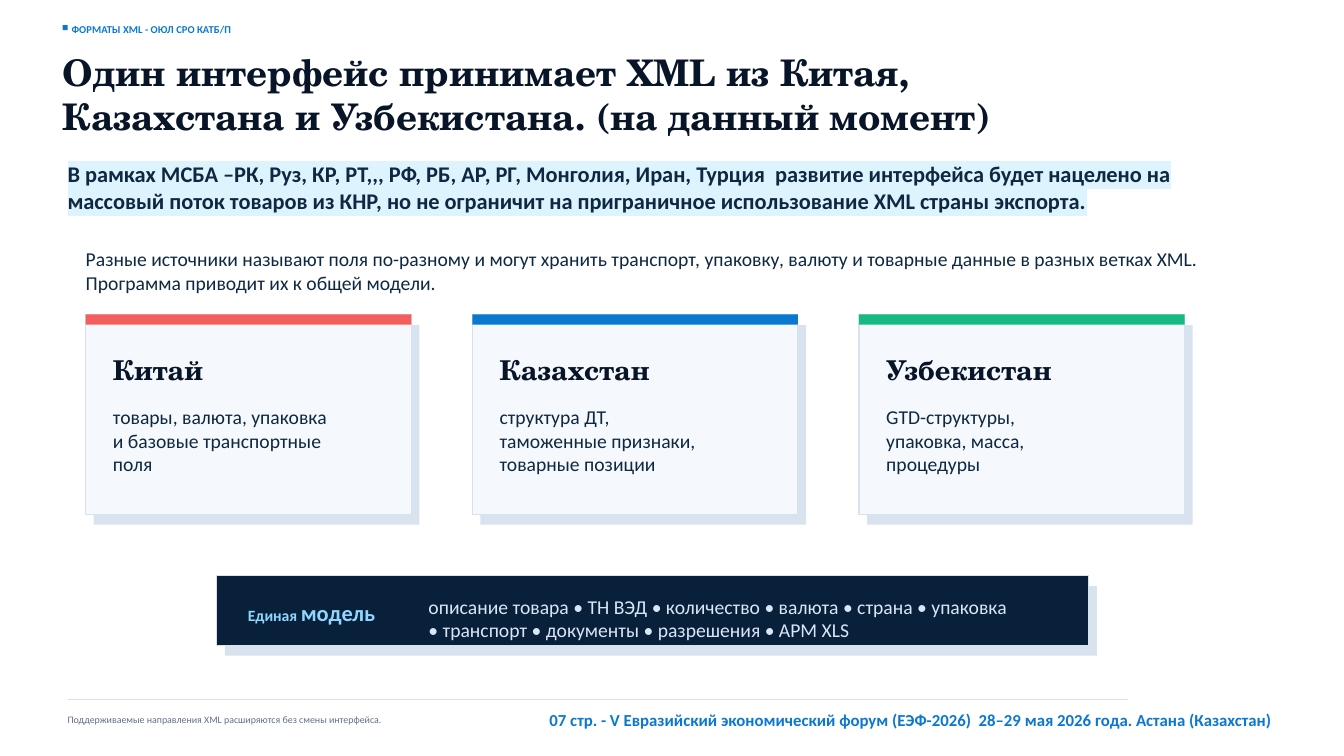
from lxml.etree import SubElement
from pptx import Presentation
from pptx.dml.color import RGBColor
from pptx.enum.shapes import MSO_CONNECTOR as Connector, MSO_SHAPE as Shape
from pptx.enum.text import MSO_ANCHOR as Anchor, MSO_AUTO_SIZE as AutoSize, PP_ALIGN as Align
from pptx.oxml import parse_xml
from pptx.oxml.ns import nsdecls, qn
from pptx.util import Inches, Pt

BLUE = RGBColor(0x0B, 0x78, 0xD0)
RED = RGBColor(0xF2, 0x5F, 0x5C)
GREEN = RGBColor(0x15, 0xB9, 0x81)
INK = RGBColor(0x08, 0x15, 0x29)
NAVY = RGBColor(0x0E, 0x28, 0x41)
PANEL = RGBColor(0x09, 0x20, 0x3B)
PAPER = RGBColor(0xF5, 0xF8, 0xFC)
SHADE = RGBColor(0xD9, 0xE2, 0xEF)
RULE = RGBColor(0xD7, 0xE2, 0xEF)
SKY = RGBColor(0x8F, 0xD6, 0xFF)
ICE = RGBColor(0xD8, 0xE7, 0xF7)
GREY = RGBColor(0x63, 0x70, 0x89)
MARKER = RGBColor(0xDD, 0xF4, 0xFF)

SANS, SERIF = "Calibri", "TeX Gyre Schola"

SECTION = "ФОРМАТЫ XML - ОЮЛ СРО КАТБ/П"
HEADLINE = "Один интерфейс принимает XML из Китая, Казахстана и Узбекистана. (на данный момент)"
LEAD = (
    "В рамках МСБА –РК, Руз, КР, РТ,,, РФ, РБ, АР, РГ, Монголия, Иран, Турция  развитие "
    "интерфейса будет нацелено на массовый поток товаров из КНР, но не ограничит на "
    "приграничное использование XML страны экспорта."
)
INTRO = (
    "Разные источники называют поля по-разному и могут хранить транспорт, упаковку, валюту "
    "и товарные данные в разных ветках XML. Программа приводит их к общей модели."
)
COUNTRIES = [
    ("Китай", RED, ["товары, валюта, упаковка", "и базовые транспортные поля"]),
    ("Казахстан", BLUE, ["структура ДТ,", "таможенные признаки,", "товарные позиции"]),
    ("Узбекистан", GREEN, ["GTD-структуры,", "упаковка, масса,", "процедуры"]),
]
MODEL_LABEL = [("Единая ", 11.2), ("модель", 16)]
MODEL_FIELDS = [
    "описание товара", "ТН ВЭД", "количество", "валюта", "страна", "упаковка",
    "транспорт", "документы", "разрешения", "АРМ XLS",
]
NOTE = "Поддерживаемые направления XML расширяются без смены интерфейса."
FOOTER = "07 стр. - V Евразийский экономический форум (ЕЭФ-2026)  28–29 мая 2026 года. Астана (Казахстан)"

CARD_LEFT, CARD_TOP, CARD_PITCH = 0.85, 3.12, 3.835
CARD_WIDTH, CARD_HEIGHT, CARD_PAD = 3.23, 1.98, 0.27
SHADE_SHIFT = (0.08, 0.105)
RULE_LEFT, RULE_TOP, RULE_WIDTH = 0.67, 6.94, 10.52

deck = Presentation()
deck.slide_width, deck.slide_height = Inches(13.33), Inches(7.5)
slide = deck.slides.add_slide(deck.slide_layouts[1])
headline, intro = slide.placeholders


def write(text, left, top, width, height, size=14, font=SANS, color=NAVY, bold=False,
          align=Align.LEFT, highlight=None, holder=None):
    box = holder or slide.shapes.add_textbox(0, 0, 0, 0)
    box.left, box.top, box.width, box.height = map(Inches, (left, top, width, height))
    frame = box.text_frame
    frame.word_wrap, frame.auto_size = True, AutoSize.NONE
    frame.vertical_anchor = Anchor.TOP
    frame.margin_left = frame.margin_top = frame.margin_right = frame.margin_bottom = 0
    lines = [text] if isinstance(text, str) else text
    for index, line in enumerate(lines):
        paragraph = frame.add_paragraph() if index else frame.paragraphs[0]
        paragraph.alignment = align
        if holder:
            paragraph.space_before = Pt(0)
            properties = paragraph._p.get_or_add_pPr()
            properties.set("marL", "0")
            properties.set("indent", "0")
            SubElement(properties, qn("a:buNone"))
        for words, points in [(line, size)] if isinstance(line, str) else line:
            run = paragraph.add_run()
            run.text = words
            run.font.size, run.font.bold = Pt(points), bold
            run.font.color.rgb = color
            if highlight:
                run.font._element.find(qn("a:solidFill")).addnext(parse_xml(
                    f'<a:highlight {nsdecls("a")}><a:srgbClr val="{highlight}"/></a:highlight>'))
            run.font.name = font


def block(left, top, width, height, fill, outline=None):
    rect = slide.shapes.add_shape(Shape.RECTANGLE, *map(Inches, (left, top, width, height)))
    rect.shadow.inherit = False
    rect.fill.solid()
    rect.fill.fore_color.rgb = fill
    if outline:
        rect.line.color.rgb, rect.line.width = outline, Pt(0.75)
    else:
        rect.line.fill.background()


def raised_block(left, top, width, height, fill):
    block(left + SHADE_SHIFT[0], top + SHADE_SHIFT[1], width, height, SHADE)
    block(left, top, width, height, fill, RULE)


block(0.62, 0.25, 0.05, 0.05, BLUE)
write(SECTION, 0.71, 0.23, 3.75, 0.19, size=7.5, color=BLUE, bold=True)
write(HEADLINE, 0.62, 0.49, 9.93, 0.85, size=26.2, font=SERIF, color=INK, bold=True, holder=headline)
write(LEAD, 0.67, 1.59, 11.66, 0.56, size=16, bold=True, highlight=MARKER)
write(INTRO, CARD_LEFT, 2.45, 11.12, 0.56, holder=intro)

for column, (country, accent, fields) in enumerate(COUNTRIES):
    left = CARD_LEFT + column * CARD_PITCH
    raised_block(left, CARD_TOP, CARD_WIDTH, CARD_HEIGHT, PAPER)
    block(left, CARD_TOP, CARD_WIDTH, 0.1, accent)
    write(country, left + CARD_PAD, CARD_TOP + 0.38, 2.29, 0.31,
          size=19.5, font=SERIF, color=INK, bold=True)
    write(fields, left + CARD_PAD, CARD_TOP + 0.9, 2.4, 0.62)

raised_block(2.15, 5.71, 8.65, 0.69, PANEL)
write([MODEL_LABEL], 2.46, 5.94, 1.56, 0.21, color=SKY, bold=True)
write(" • ".join(MODEL_FIELDS), 4.25, 5.9, 5.83, 0.25, color=ICE)

rule = slide.shapes.add_connector(
    Connector.STRAIGHT, *map(Inches, (RULE_LEFT, RULE_TOP, RULE_LEFT + RULE_WIDTH, RULE_TOP)))
rule.line.color.rgb, rule.line.width = RULE, Pt(0.75)
SubElement(rule._element.spPr, qn("a:effectLst"))
write(NOTE, RULE_LEFT, 7.08, 7.92, 0.19, size=7.1, color=GREY)
write(FOOTER, 5.11, 7.04, 7.51, 0.25, size=12, color=BLUE, bold=True, align=Align.RIGHT)

deck.save("out.pptx")
